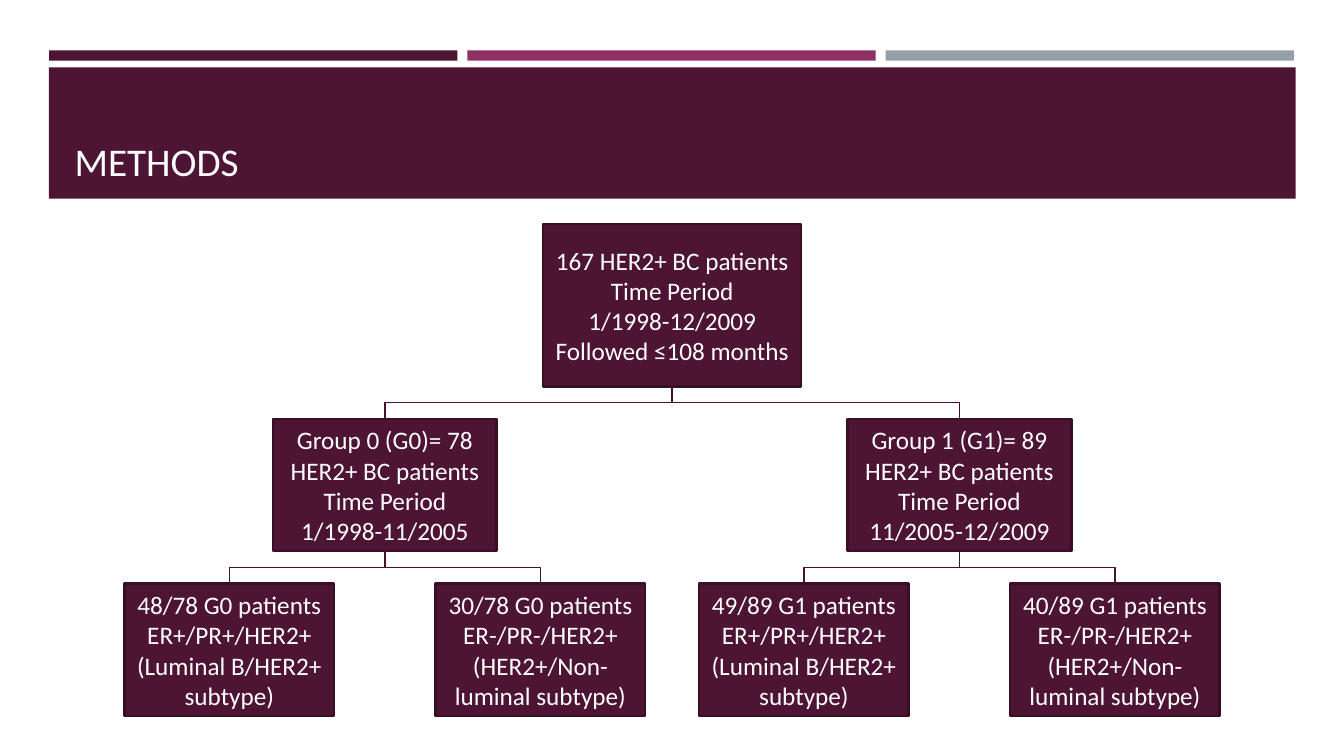
from pptx import Presentation
from pptx import util as u
from pptx.dml.color import RGBColor
from pptx.enum import shapes, text
from pptx.oxml.ns import qn
from lxml import etree

PLUM = RGBColor(0x4D, 0x14, 0x34)
ROSE = RGBColor(0x90, 0x31, 0x63)
GREY = RGBColor(0x96, 0x9F, 0xA7)
EDGE = RGBColor(0x39, 0x0F, 0x26)
LINK = RGBColor(0x45, 0x12, 0x2F)
WHITE = RGBColor(0xFF, 0xFF, 0xFF)


def write(frame, lines, size=18, align=text.PP_ALIGN.CENTER,
          anchor=text.MSO_ANCHOR.MIDDLE, font="Calibri", color=WHITE):
    frame.word_wrap = True
    frame.vertical_anchor = anchor
    for i, line in enumerate(lines):
        para = frame.paragraphs[0] if i == 0 else frame.add_paragraph()
        para.alignment = align
        run = para.add_run()
        run.text = line
        run.font.name = font
        run.font.size = u.Pt(size)
        run.font.color.rgb = color


class Chart:
    """Style and slide of the patient tree; lengths in centimetres."""

    def __init__(self, slide):
        self.shapes = slide.shapes
        self.edge = u.Pt(1.75)
        self.thin = u.Pt(1)

    def rect(self, left, top, width, height, fill):
        box = self.shapes.add_shape(
            shapes.MSO_SHAPE.RECTANGLE,
            u.Cm(left), u.Cm(top), u.Cm(width), u.Cm(height))
        box.shadow.inherit = False
        box.fill.solid()
        box.fill.fore_color.rgb = fill
        box.line.fill.background()
        return box

    def title(self, left, top, width, height, line):
        box = self.shapes.add_textbox(
            u.Cm(left), u.Cm(top), u.Cm(width), u.Cm(height))
        write(box.text_frame, [line], size=28, align=text.PP_ALIGN.LEFT,
              anchor=text.MSO_ANCHOR.BOTTOM)

    def node(self, mid, top, width, height, lines):
        box = self.rect(mid - width / 2, top, width, height, PLUM)
        box.line.color.rgb = EDGE
        box.line.width = self.edge
        write(box.text_frame, lines)

    def link(self, x1, y1, x2, y2):
        # An elbow starts sideways, so it is laid out flat and then turned
        mid_x, mid_y = (x1 + x2) / 2, (y1 + y2) / 2
        right = x2 > x1
        half_w = (y2 - y1) / 2 * (-1 if right else 1)
        half_h = abs(x2 - x1) / 2
        line = self.shapes.add_connector(
            shapes.MSO_CONNECTOR.ELBOW,
            u.Cm(mid_x - half_w), u.Cm(mid_y - half_h),
            u.Cm(mid_x + half_w), u.Cm(mid_y + half_h))
        line.line.color.rgb = LINK
        line.line.width = self.thin
        props = line._element.spPr
        turn = 270 if right else 90
        props.find(qn("a:xfrm")).set("rot", str(turn * 60000))
        etree.SubElement(props, qn("a:effectLst"))


ROOT = ["167 HER2+ BC patients", "Time Period", "1/1998-12/2009",
        "Followed ≤108 months"]
LUMINAL = ["ER+/PR+/HER2+", "(Luminal B/HER2+ subtype)"]
OTHER = ["ER-/PR-/HER2+", "(HER2+/Non-luminal subtype)"]
# Side, group text, then the counts of its two subtypes
GROUPS = [
    (-1, ["Group 0 (G0)= 78 HER2+ BC patients", "Time Period",
          "1/1998-11/2005"], "48/78 G0 patients", "30/78 G0 patients"),
    (1, ["Group 1 (G1)= 89 HER2+ BC patients", "Time Period",
         "11/2005-12/2009"], "49/89 G1 patients", "40/89 G1 patients"),
]


def main():
    deck = Presentation()
    deck.slide_width, deck.slide_height = u.Cm(33.87), u.Cm(19.05)
    chart = Chart(deck.slides.add_slide(deck.slide_layouts[6]))

    # Header: three bars above the title band
    for i, fill in enumerate((PLUM, ROSE, GREY)):
        chart.rect(1.24 + 10.54 * i, 1.27, 10.29, 0.26, fill)
    chart.rect(1.23, 1.7, 31.42, 3.31, PLUM)
    chart.title(1.63, 1.96, 30.63, 2.82, "METHODS")

    # Tree: all patients, two groups, two subtypes in each
    mid = 16.94
    root_end, group_top, group_end, leaf_top = 9.74, 10.56, 13.89, 14.71
    high = group_end - group_top
    chart.node(mid, 5.65, 6.5, root_end - 5.65, ROOT)
    for side, lines, first, second in GROUPS:
        group = mid + side * 7.24
        chart.link(mid, root_end, group, group_top)
        chart.node(group, group_top, 5.64, high, lines)
        for step, count, kind in ((-1, first, LUMINAL), (1, second, OTHER)):
            leaf = group + step * 3.92
            chart.link(group, group_end, leaf, leaf_top)
            chart.node(leaf, leaf_top, 5.28, high, [count] + kind)

    deck.save("out.pptx")


if __name__ == "__main__":
    main()
